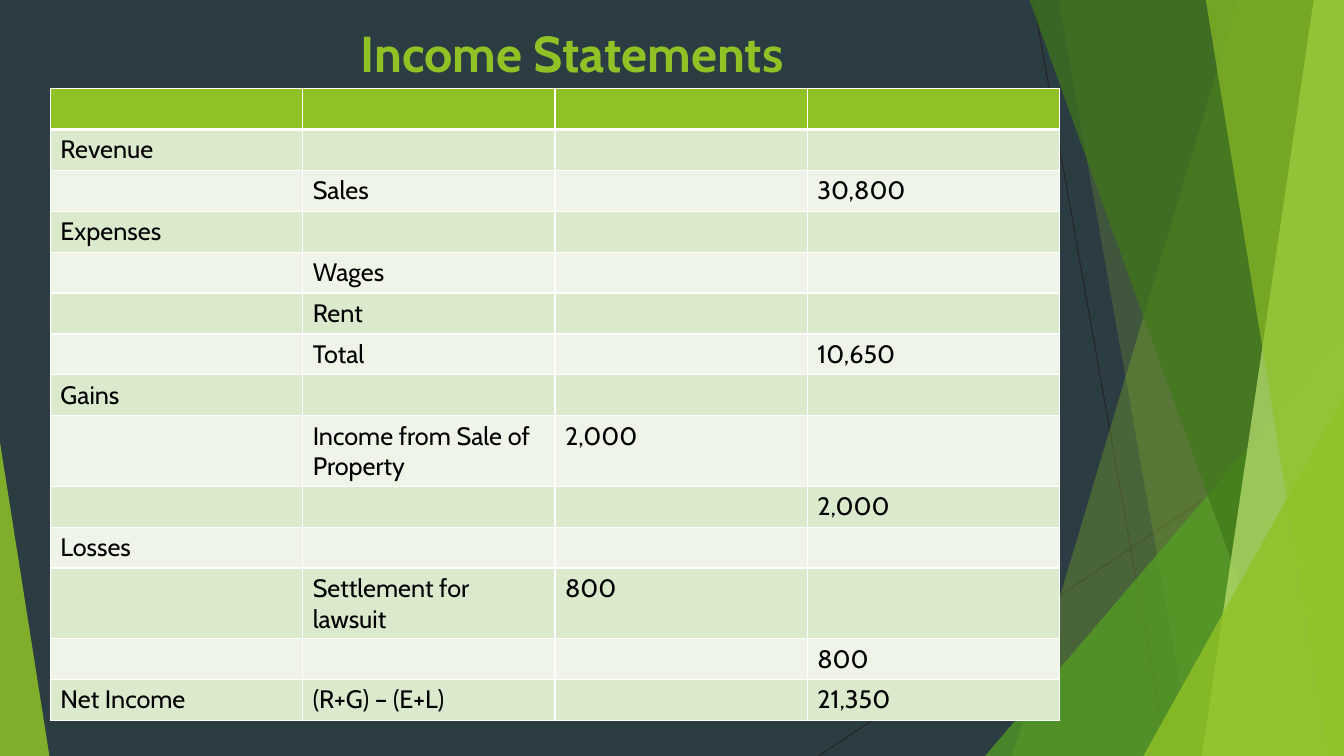
from dataclasses import dataclass

from lxml.etree import SubElement
from pptx import Presentation
from pptx.dml.color import RGBColor
from pptx.enum.shapes import MSO_CONNECTOR, MSO_SHAPE
from pptx.enum.text import MSO_AUTO_SIZE, PP_ALIGN
from pptx.oxml.ns import qn
from pptx.util import Inches, Pt

SLIDE_WIDTH = 13.33
SLIDE_HEIGHT = 7.5


@dataclass(frozen=True)
class Theme:
    font: str = "Cabin"
    title_size: int = 36
    body_size: int = 18
    background: str = "2C3C43"
    accent: str = "90C226"
    green: str = "54A021"
    dark_green: str = "3F7819"
    pale_green: str = "C0E474"
    hairline: str = "262626"
    border: str = "FFFFFF"
    body: str = "000000"
    bands: tuple = ("DBE9CD", "EEF4E8")


ROWS = [
    ("", "", "", ""),
    ("Revenue", "", "", ""),
    ("", "Sales", "", "30,800"),
    ("Expenses", "", "", ""),
    ("", "Wages", "", ""),
    ("", "Rent", "", ""),
    ("", "Total", "", "10,650"),
    ("Gains", "", "", ""),
    ("", "Income from Sale of Property", "2,000", ""),
    ("", "", "", "2,000"),
    ("Losses", "", "", ""),
    ("", "Settlement for lawsuit", "800", ""),
    ("", "", "", "800"),
    ("Net Income", "(R+G) – (E+L)", "", "21,350"),
]


def write_text(text_frame, text, *, font, size, color, bold=False, align=PP_ALIGN.LEFT):
    paragraph = text_frame.paragraphs[0]
    paragraph.alignment = align
    run = paragraph.add_run()
    run.text = text
    run.font.name = font
    run.font.size = Pt(size)
    run.font.bold = bold
    run.font.color.rgb = RGBColor.from_string(color)


class SlideBuilder:
    def __init__(self, slide, theme):
        self.slide = slide
        self.theme = theme

    def background(self):
        fill = self.slide.background.fill
        fill.solid()
        fill.fore_color.rgb = RGBColor.from_string(self.theme.background)

    def line(self, start, end):
        connector = self.slide.shapes.add_connector(
            MSO_CONNECTOR.STRAIGHT, *map(Inches, start + end)
        )
        connector.line.color.rgb = RGBColor.from_string(self.theme.hairline)
        connector.line.width = Pt(0.75)
        SubElement(connector._element.spPr, qn("a:effectLst"))

    def paint(self, shape, color, opacity):
        shape.shadow.inherit = False
        shape.line.fill.background()
        shape.fill.solid()
        shape.fill.fore_color.rgb = RGBColor.from_string(color)
        color_element = shape._element.spPr.find(f"{qn('a:solidFill')}/{qn('a:srgbClr')}")
        SubElement(color_element, qn("a:alpha"), val=str(opacity * 1000))

    def right_panel(self, top_x, bottom_x, color, opacity):
        corners = [(SLIDE_WIDTH, 0), (SLIDE_WIDTH, SLIDE_HEIGHT), (bottom_x, SLIDE_HEIGHT)]
        builder = self.slide.shapes.build_freeform(Inches(top_x), 0)
        builder.add_line_segments([(Inches(x), Inches(y)) for x, y in corners], close=True)
        self.paint(builder.convert_to_shape(), color, opacity)

    def corner_triangle(self, left, width, height, apex, color, opacity):
        shape = self.slide.shapes.add_shape(
            MSO_SHAPE.ISOSCELES_TRIANGLE,
            Inches(left), Inches(SLIDE_HEIGHT - height), Inches(width), Inches(height),
        )
        shape.adjustments[0] = apex
        self.paint(shape, color, opacity)

    def title(self, text, left, top, width, height):
        box = self.slide.shapes.add_textbox(*map(Inches, (left, top, width, height)))
        frame = box.text_frame
        frame.word_wrap = True
        frame.auto_size = MSO_AUTO_SIZE.SHAPE_TO_FIT_TEXT
        write_text(
            frame, text, font=self.theme.font, size=self.theme.title_size,
            color=self.theme.accent, bold=True, align=PP_ALIGN.CENTER,
        )

    def cell_borders(self, cell, top, bottom):
        properties = cell._tc.get_or_add_tcPr()
        for side, width in (("lnL", 1), ("lnR", 1), ("lnT", top), ("lnB", bottom)):
            border = SubElement(properties, qn(f"a:{side}"), w=str(Pt(width)))
            fill = SubElement(border, qn("a:solidFill"))
            SubElement(fill, qn("a:srgbClr"), val=self.theme.border)

    def table(self, rows, left, top, width, height):
        table = self.slide.shapes.add_table(
            len(rows), len(rows[0]), *map(Inches, (left, top, width, height))
        ).table
        for row_index, row in enumerate(rows):
            header = row_index == 0
            color = self.theme.accent if header else self.theme.bands[(row_index - 1) % 2]
            for column_index, text in enumerate(row):
                cell = table.cell(row_index, column_index)
                self.cell_borders(cell, 3 if row_index == 1 else 1, 3 if header else 1)
                cell.fill.solid()
                cell.fill.fore_color.rgb = RGBColor.from_string(color)
                if text:
                    write_text(
                        cell.text_frame, text, font=self.theme.font,
                        size=self.theme.body_size, color=self.theme.body,
                    )


def main():
    presentation = Presentation()
    presentation.slide_width = Inches(SLIDE_WIDTH)
    presentation.slide_height = Inches(SLIDE_HEIGHT)
    theme = Theme()
    slide = presentation.slides.add_slide(presentation.slide_layouts[6])
    builder = SlideBuilder(slide, theme)

    builder.background()
    builder.line((10.25, 0), (11.58, SLIDE_HEIGHT))
    builder.line((SLIDE_WIDTH, 4.03), (8.12, SLIDE_HEIGHT))
    builder.right_panel(12.28, 10.04, theme.accent, 30)
    builder.right_panel(10.5, 11.83, theme.accent, 20)
    builder.corner_triangle(9.77, 3.56, 4.17, 1, theme.green, 72)
    builder.right_panel(10.21, 12.91, theme.dark_green, 70)
    builder.right_panel(13.03, 11.92, theme.pale_green, 70)
    builder.right_panel(11.96, 13.18, theme.accent, 65)
    builder.corner_triangle(11.34, 1.99, 3.57, 1, theme.accent, 80)
    builder.corner_triangle(0, 0.49, 3.11, 0, theme.accent, 85)
    builder.title("Income Statements", 2.84, 0.17, 5.67, 0.71)
    builder.table(ROWS, 0.5, 0.88, 10.01, 5.68)

    presentation.save("out.pptx")


if __name__ == "__main__":
    main()
